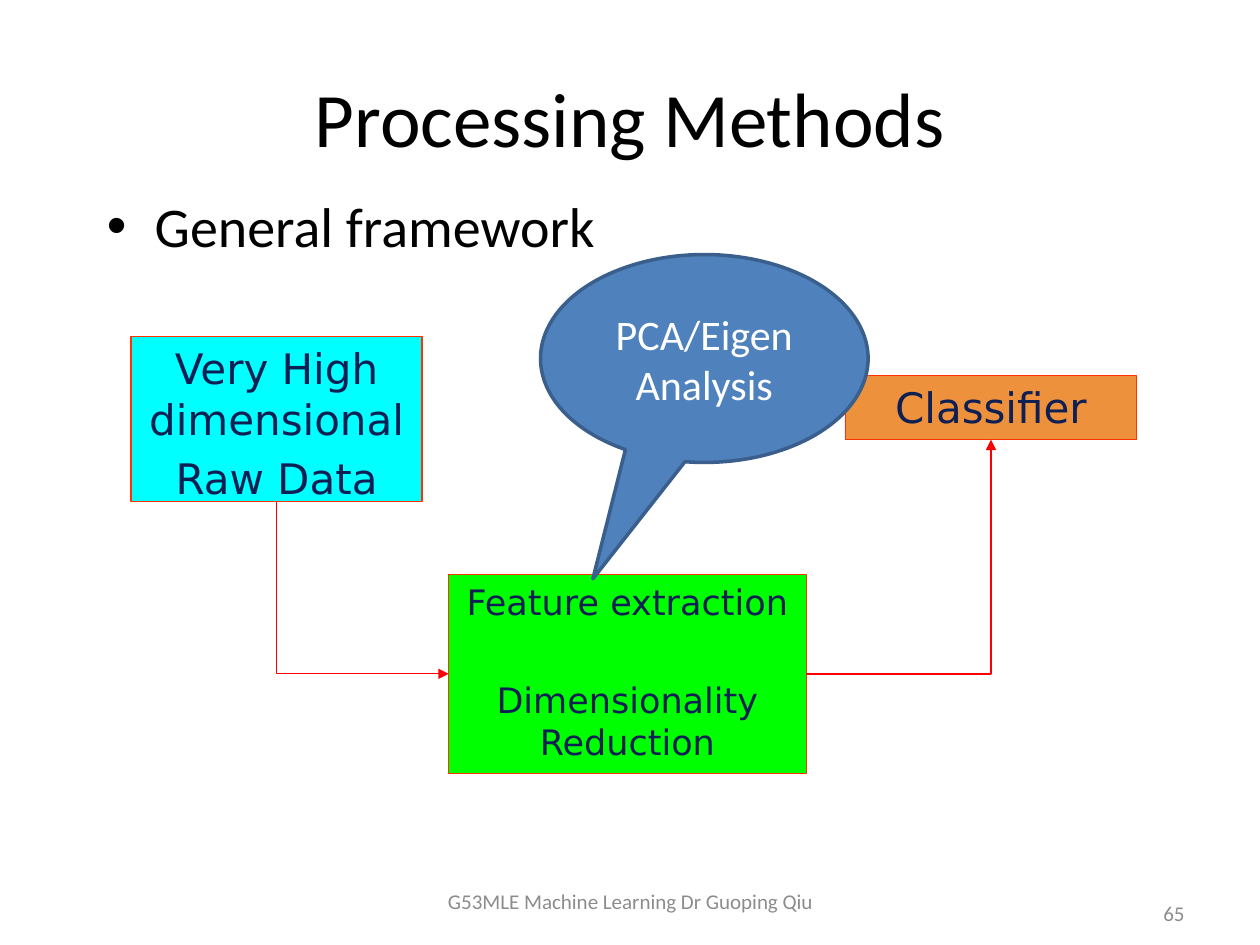
from pptx import Presentation
from pptx.dml.color import RGBColor
from pptx.enum.shapes import MSO_CONNECTOR as Link, MSO_SHAPE as Form
from pptx.enum.text import MSO_ANCHOR as Anchor, PP_ALIGN as Align
from pptx.oxml.ns import qn
from pptx.util import Inches, Pt
from lxml.etree import SubElement as Sub


def tint(code):
    return RGBColor.from_string(code)


def write(shape, lines, size, face, color, side=Align.CENTER, hold=Anchor.MIDDLE, gap=0):
    frame = shape.text_frame
    for name, value in {"word_wrap": True, "vertical_anchor": hold}.items():
        setattr(frame, name, value)
    frame.text = "\n".join(lines)
    for row, para in enumerate(frame.paragraphs):
        para.alignment = side
        para.space_before = Pt(gap if row else 0)
        para.font.color.rgb = tint(color)
        for name, value in {"size": Pt(size), "name": face}.items():
            setattr(para.runs[0].font, name, value)
        para.runs[0].font.color.rgb = tint(color)


deck = Presentation()
deck.slide_width, deck.slide_height = Inches(10), Inches(7.5)
slide = deck.slides.add_slide(deck.slide_layouts[6])
shapes = slide.shapes
col, row = deck.slide_width // 100, deck.slide_height // 75

texts = [
    ((5, 3, 90, 12.5), "Processing Methods", 44, "000000", Align.CENTER, Anchor.MIDDLE),
    ((7.5, 14.7, 85, 54), "General framework", 32, "000000", Align.LEFT, Anchor.TOP),
    ((71.7, 70.5, 23.3, 4), "65", 12, "8C8C8C", Align.RIGHT, Anchor.MIDDLE),
    ((34.2, 69.5, 31.7, 4), "G53MLE Machine Learning Dr Guoping Qiu", 12, "8C8C8C",
     Align.CENTER, Anchor.MIDDLE),
]
for (x, y, w, h), words, size, color, side, hold in texts:
    area = shapes.add_textbox(int(x * col), int(y * row), int(w * col), int(h * row))
    write(area, [words], size, "Calibri", color, side, hold)
    if side == Align.LEFT:
        props = area.text_frame.paragraphs[0]._p.get_or_add_pPr()
        props.set("marL", str(Inches(0.38)))
        props.set("indent", str(-Inches(0.38)))
        Sub(props, qn("a:buFont")).set("typeface", "Arial")
        Sub(props, qn("a:buChar")).set("char", "•")

red, navy, sans = "FF3300", "0E1F54", "DejaVu Sans"
nodes = [
    (Form.RECTANGLE, (10.4, 26.7, 23.1, 13.1), "00FFFF", red, 0.75,
     ["Very High dimensional", "Raw Data"], 24, sans, navy, Anchor.TOP, 5),
    (Form.RECTANGLE, (35.6, 45.6, 28.4, 15.8), "00FF00", red, 0.75,
     ["Feature extraction", "Dimensionality Reduction"], 20, sans, navy, Anchor.TOP, 32),
    (Form.RECTANGLE, (67.1, 29.8, 23.1, 5.1), "EE913C", red, 0.75,
     ["Classifier"], 24, sans, navy, Anchor.TOP, 0),
    (Form.OVAL_CALLOUT, (42.9, 20.2, 26, 16.5), "4F81BD", "3A5F8C", 2,
     ["PCA/Eigen Analysis"], 24, "Calibri", "FFFFFF", Anchor.MIDDLE, 0),
]
made = []
for form, (x, y, w, h), fill, edge, width, lines, size, face, color, hold, gap in nodes:
    node = shapes.add_shape(form, int(x * col), int(y * row), int(w * col), int(h * row))
    node.shadow.inherit = False
    node.fill.solid()
    node.fill.fore_color.rgb = tint(fill)
    node.line.color.rgb = tint(edge)
    node.line.width = Pt(width)
    write(node, lines, size, face, color, hold=hold, gap=gap)
    made.append(node)
data, work, sort, note = made
note.adjustments[0], note.adjustments[1] = -0.34, 1.06

turn = {"rot": "16200000", "flipH": "1"}
for start, out, end, into, spin in [(data, 2, work, 1, turn), (work, 3, sort, 2, {})]:
    link = shapes.add_connector(Link.ELBOW, 0, 0, 0, 0)
    link.begin_connect(start, out)
    link.end_connect(end, into)
    link.line.color.rgb = tint("FF0000")
    link.line.width = Pt(0.75)
    props = link._element.spPr
    props.find(qn("a:prstGeom")).set("prst", "bentConnector2")
    for name, value in spin.items():
        props.find(qn("a:xfrm")).set(name, value)
    Sub(props.find(qn("a:ln")), qn("a:tailEnd")).set("type", "triangle")
    Sub(props, qn("a:effectLst"))
    note._element.addprevious(link._element)

deck.save("out.pptx")
